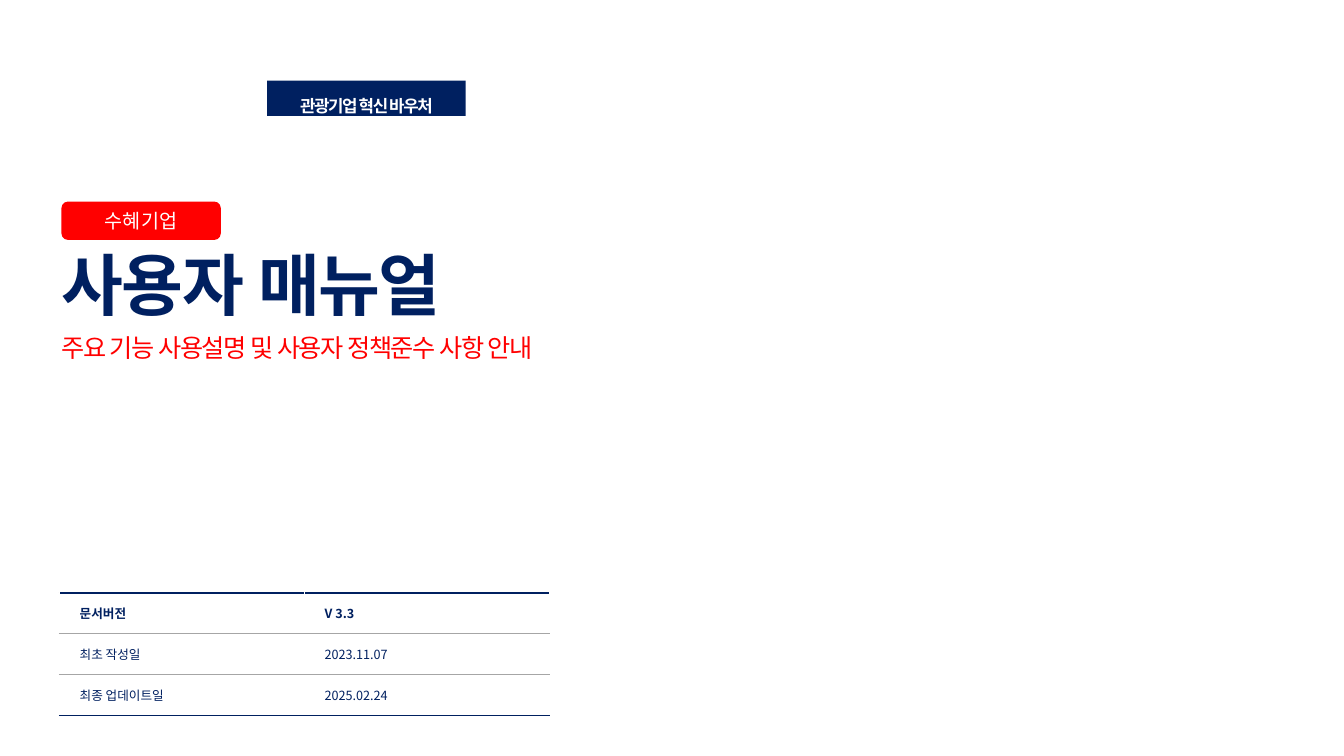
from lxml import etree
from pptx import Presentation
from pptx.dml.color import RGBColor
from pptx.enum.shapes import MSO_SHAPE
from pptx.enum.text import MSO_ANCHOR, PP_ALIGN
from pptx.oxml.ns import qn
from pptx.util import Inches, Pt

RECTANGLE = MSO_SHAPE.RECTANGLE
ROUNDED = MSO_SHAPE.ROUNDED_RECTANGLE
TOP, MIDDLE = MSO_ANCHOR.TOP, MSO_ANCHOR.MIDDLE
CENTER = PP_ALIGN.CENTER
NAVY, RED, WHITE, GREY = "002060", "FF0000", "FFFFFF", "A6A6A6"
KOREAN, LATIN = "Noto Sans CJK KR", "Roboto"


def color(hex_string):
    return RGBColor.from_string(hex_string)


def write(frame, text, size, face, ink, bold=False, tight=False):
    """Fill a text frame with one styled line; tight narrows the letter spacing by 1 pt."""
    frame.text = text
    frame.word_wrap = True
    frame.vertical_anchor = MIDDLE
    run = frame.paragraphs[0].runs[0]
    run.font.size = Pt(size)
    run.font.name = face
    run.font.bold = bold
    run.font.color.rgb = color(ink)
    properties = run._r.get_or_add_rPr()
    etree.SubElement(properties, qn("a:ea")).set("typeface", face)
    if tight:
        properties.set("spc", "-100")


prs = Presentation()
prs.slide_width = Inches(13.33)
prs.slide_height = Inches(7.5)
slide = prs.slides.add_slide(prs.slide_layouts[6])
shapes = slide.shapes

# Title and subtitle
headings = [
    ("사용자 매뉴얼", 2.45, 0.83, 48, NAVY, True),
    ("주요 기능 사용설명 및 사용자 정책준수 사항 안내", 3.36, 0.21, 18, RED, False),
]
for text, top, height, size, ink, bold in headings:
    heading = shapes.add_textbox(Inches(0.61), Inches(top), Inches(5.31), Inches(height)).text_frame
    heading.margin_left = heading.margin_right = heading.margin_top = heading.margin_bottom = 0
    write(heading, text, size, LATIN, ink, bold, tight=True)
    heading.paragraphs[0].line_spacing = 0.9

# Version table
ROW_LABELS = [("문서버전", "V 3.3"), ("최초 작성일", "2023.11.07"), ("최종 업데이트일", "2025.02.24")]
version_frame = shapes.add_table(3, 2, Inches(0.59), Inches(5.88), Inches(4.86), Inches(1.22))
versions = version_frame.table
for column in versions.columns:
    column.width = Inches(2.43)

side, outer, inner = (WHITE, 1), (NAVY, 1.5), (GREY, 0.5)
last = len(ROW_LABELS) - 1
for r, row in enumerate(ROW_LABELS):
    borders = [
        ("a:lnL", side),
        ("a:lnR", side),
        ("a:lnT", outer if r == 0 else inner),
        ("a:lnB", outer if r == last else inner),
    ]
    for c, text in enumerate(row):
        cell = versions.cell(r, c)
        write(cell.text_frame, text, 9, KOREAN, NAVY, bold=r == 0)
        cell.vertical_anchor = MIDDLE
        cell.margin_left = Inches(0.2)
        cell.fill.background()
        cell_properties = cell._tc.get_or_add_tcPr()
        for position, (tag, (ink, width)) in enumerate(borders):
            line = etree.Element(qn(tag), w=str(Pt(width)))
            solid = etree.SubElement(line, qn("a:solidFill"))
            etree.SubElement(solid, qn("a:srgbClr"), val=ink)
            cell_properties.insert(position, line)

# Programme and audience labels
labels = [
    (RECTANGLE, 2.65, 0.8, 1.97, 0.35, NAVY, "관광기업 혁신 바우처", 12, True),
    (ROUNDED, 0.61, 2, 1.58, 0.38, RED, "수혜기업", 14, False),
]
for preset, left, top, width, height, fill, text, size, is_programme in labels:
    label = shapes.add_shape(preset, Inches(left), Inches(top), Inches(width), Inches(height))
    label.shadow.inherit = False
    label.fill.solid()
    label.fill.fore_color.rgb = color(fill)
    label.line.fill.background()
    frame = label.text_frame
    write(frame, text, size, KOREAN, WHITE, bold=is_programme, tight=is_programme)
    frame.paragraphs[0].alignment = CENTER
    if is_programme:
        frame.vertical_anchor = TOP
        frame.margin_left = frame.margin_right = frame.margin_top = frame.margin_bottom = 0
        frame.paragraphs[0].line_spacing = Pt(25)

prs.save("out.pptx")
